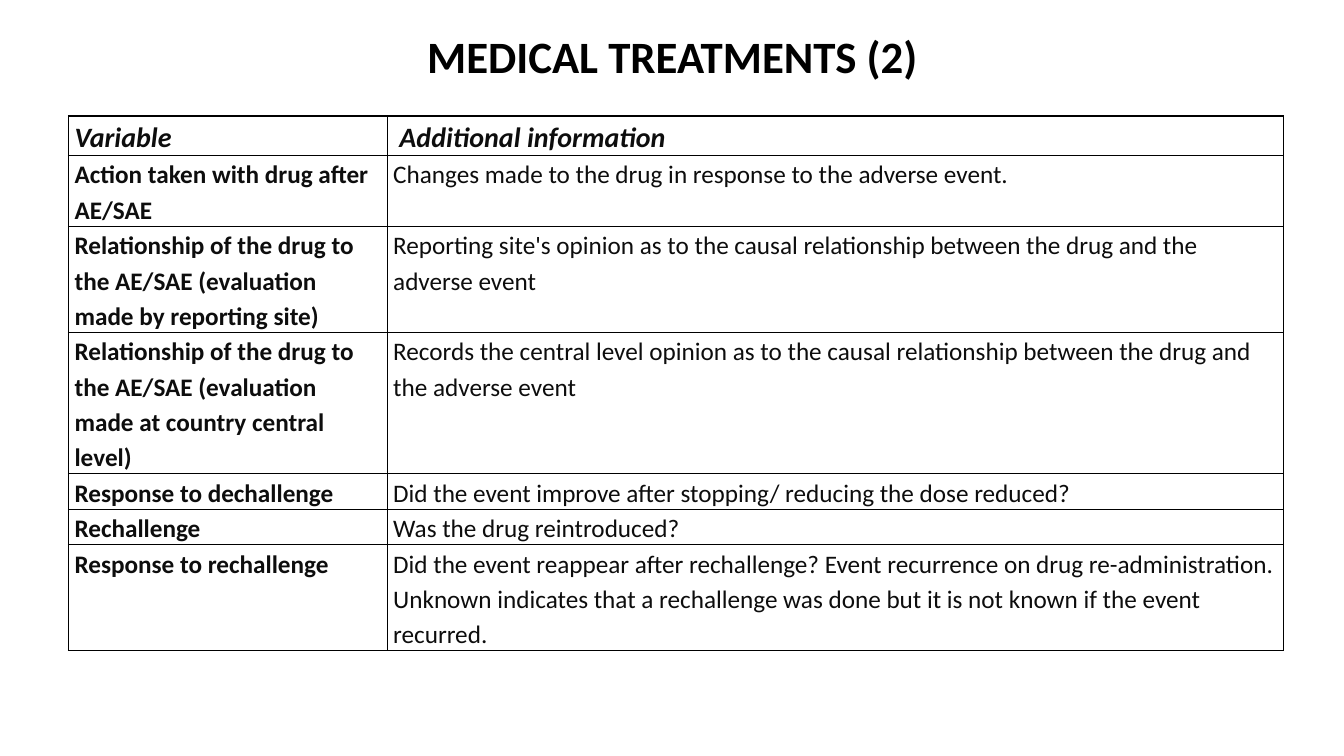
from dataclasses import dataclass

from lxml import etree
from pptx import Presentation
from pptx import util as u
from pptx.dml import color
from pptx.enum import text
from pptx.oxml import ns

WIDE, HIGH = 13.33, 7.5
LINE = 0.35  # height of one text line in the table body
HEAD = 0.39  # height of the header row
COLS = (3.16, 8.89)
FONT = "Calibri"
BLACK, INK = "000000", "0D0D0D"


@dataclass
class Entry:
    name: str
    info: str
    lines: int


ROWS = [
    Entry("Action taken with drug after AE/SAE",
          "Changes made to the drug in response to the adverse event.", 2),
    Entry("Relationship of the drug to the AE/SAE (evaluation made by reporting site)",
          "Reporting site's opinion as to the causal relationship between the drug "
          "and the adverse event", 3),
    Entry("Relationship of the drug to the AE/SAE (evaluation made at country central level)",
          "Records the central level opinion as to the causal relationship between "
          "the drug and the adverse event", 4),
    Entry("Response to dechallenge",
          "Did the event improve after stopping/ reducing the dose reduced?", 1),
    Entry("Rechallenge", "Was the drug reintroduced?", 1),
    Entry("Response to rechallenge",
          "Did the event reappear after rechallenge? Event recurrence on drug "
          "re-administration. Unknown indicates that a rechallenge was done but it is "
          "not known if the event recurred.", 3),
]


def paint(hue: str) -> color.RGBColor:
    return color.RGBColor.from_string(hue)


def write(para, words: str, size: int, hue: str, bold: bool, slant: bool = False) -> None:
    run = para.add_run()
    run.text = words
    font = run.font
    font.name, font.size = FONT, u.Pt(size)
    font.bold, font.italic = bold, slant
    font.color.rgb = paint(hue)


def border(cell) -> None:
    props = cell._tc.get_or_add_tcPr()
    for side in ("lnL", "lnR", "lnT", "lnB"):
        edge = etree.SubElement(props, ns.qn(f"a:{side}"), w=str(u.Pt(1)))
        fill = etree.SubElement(edge, ns.qn("a:solidFill"))
        etree.SubElement(fill, ns.qn("a:srgbClr"), val=BLACK)


def fill_cell(cell, words: str, size: int, bold: bool, head: bool) -> None:
    cell.margin_left = cell.margin_right = u.Inches(0.06)
    cell.margin_top = cell.margin_bottom = 0
    cell.vertical_anchor = text.MSO_ANCHOR.MIDDLE if head else text.MSO_ANCHOR.TOP
    border(cell)
    cell.fill.background()
    para = cell.text_frame.paragraphs[0]
    para.line_spacing = 1.15
    write(para, words, size, INK, bold, head)


def add_title(slide) -> None:
    title = slide.shapes.title
    title.left, title.top = u.Inches(2.17), u.Inches(0.21)
    title.width, title.height = u.Inches(9), u.Inches(0.69)
    title.text_frame.vertical_anchor = text.MSO_ANCHOR.MIDDLE
    para = title.text_frame.paragraphs[0]
    para.alignment = text.PP_ALIGN.CENTER
    write(para, "MEDICAL TREATMENTS (2)", 32, BLACK, True)


def add_grid(slide) -> None:
    highs = [HEAD] + [row.lines * LINE for row in ROWS]
    grid = slide.shapes.add_table(
        len(highs), len(COLS), u.Inches(0.68), u.Inches(1.15),
        u.Inches(sum(COLS)), u.Inches(sum(highs))).table
    grid.first_row = grid.horz_banding = False
    for col, wide in zip(grid.columns, COLS):
        col.width = u.Inches(wide)
    for row, high in zip(grid.rows, highs):
        row.height = u.Inches(high)

    # Header row
    for c, words in enumerate(("Variable", " Additional information")):
        fill_cell(grid.cell(0, c), words, 20, True, True)

    # Body rows: bold variable, plain information
    for r, row in enumerate(ROWS, 1):
        fill_cell(grid.cell(r, 0), row.name, 18, True, False)
        fill_cell(grid.cell(r, 1), row.info, 18, False, False)


def main() -> None:
    deck = Presentation()
    deck.slide_width, deck.slide_height = u.Inches(WIDE), u.Inches(HIGH)
    slide = deck.slides.add_slide(deck.slide_layouts.get_by_name("Title Only"))
    add_title(slide)
    add_grid(slide)
    deck.save("out.pptx")


if __name__ == "__main__":
    main()
